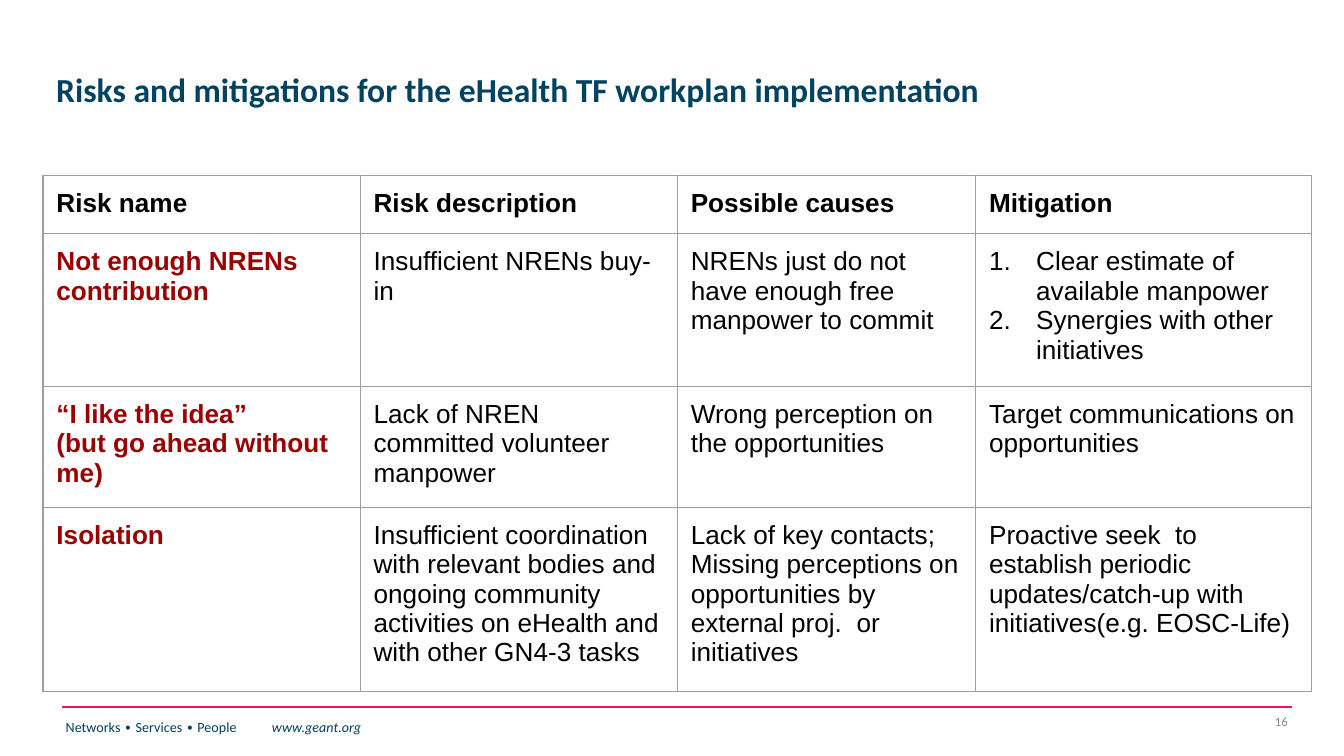
from dataclasses import dataclass

import lxml.etree
import pptx
import pptx.dml.color
import pptx.enum.shapes
import pptx.enum.text
import pptx.oxml
import pptx.oxml.ns
import pptx.util

PX = 4572  # EMU per px, 200 px to the inch
NAVY, BLUE, PINK = "004361", "003F5E", "ED1556"
BLACK, RED, GREY, BORDER = "000000", "990000", "888888", "9E9E9E"
ALIGN = pptx.enum.text.PP_ALIGN
ANCHOR = pptx.enum.text.MSO_ANCHOR


@dataclass
class Span:
    text: str
    size: float
    color: str
    font: str = "Calibri"
    bold: bool = False
    italic: bool = False


@dataclass
class Label:
    left: int
    top: int
    width: int
    height: int
    spans: list[Span]
    align: ALIGN = ALIGN.LEFT
    anchor: ANCHOR = ANCHOR.MIDDLE
    line_spacing: float = 1.0
    tab: int = 0


@dataclass
class Risk:
    name: str
    description: str
    causes: str
    mitigation: str | list[str]  # a list is numbered
    height: int


def px(length: int) -> pptx.util.Emu:
    return pptx.util.Emu(length * PX)


def rgb(color: str) -> pptx.dml.color.RGBColor:
    return pptx.dml.color.RGBColor.from_string(color)


def add_child(parent, tag: str, **attributes: str):
    child = lxml.etree.SubElement(parent, pptx.oxml.ns.qn(tag))
    for key, value in attributes.items():
        child.set(key, value)
    return child


def add_span(paragraph, span: Span) -> None:
    for index, line in enumerate(span.text.split("\n")):
        if index:
            paragraph.add_line_break()
        run = paragraph.add_run()
        run.text = line
        run.font.name = span.font
        run.font.size = pptx.util.Pt(span.size)
        run.font.bold = span.bold
        run.font.italic = span.italic
        run.font.color.rgb = rgb(span.color)


def add_label(slide, label: Label) -> None:
    box = slide.shapes.add_textbox(px(label.left), px(label.top), px(label.width), px(label.height))
    frame = box.text_frame
    frame.word_wrap = True
    frame.vertical_anchor = label.anchor
    paragraph = frame.paragraphs[0]
    paragraph.alignment = label.align
    paragraph.line_spacing = label.line_spacing
    if label.tab:
        stops = add_child(paragraph._p.get_or_add_pPr(), "a:tabLst")
        add_child(stops, "a:tab", pos=str(px(label.tab)), algn="l")
    for span in label.spans:
        add_span(paragraph, span)


def number_paragraph(paragraph) -> None:
    properties = paragraph._p.get_or_add_pPr()
    properties.set("marL", str(px(70)))
    properties.set("indent", str(px(-70)))
    color = add_child(properties, "a:buClr")
    add_child(color, "a:srgbClr", val=BLACK)
    add_child(properties, "a:buFont", typeface="Arial")
    add_child(properties, "a:buAutoNum", type="arabicPeriod")


def fill_cell(cell, content: str | list[str], color: str, bold: bool) -> None:
    cell.margin_left = cell.margin_right = cell.margin_top = cell.margin_bottom = px(20)
    cell.vertical_anchor = ANCHOR.TOP
    # Borders come before the fill in the cell properties
    properties = cell._tc.get_or_add_tcPr()
    for side in ("a:lnL", "a:lnR", "a:lnT", "a:lnB"):
        border = add_child(properties, side, w=str(pptx.util.Pt(0.75)))
        add_child(add_child(border, "a:solidFill"), "a:srgbClr", val=BORDER)
    cell.fill.background()
    numbered = isinstance(content, list)
    for index, text in enumerate(content if numbered else [content]):
        frame = cell.text_frame
        paragraph = frame.add_paragraph() if index else frame.paragraphs[0]
        if numbered:
            number_paragraph(paragraph)
        add_span(paragraph, Span(text, 14, color, "Arial", bold))


def add_risk_table(slide, left: int, top: int, widths: list[int], rows: list[Risk]) -> None:
    height = sum(row.height for row in rows)
    table = slide.shapes.add_table(
        len(rows), len(widths), px(left), px(top), px(sum(widths)), px(height)).table
    table.first_row = table.horz_banding = False
    for column, width in zip(table.columns, widths):
        column.width = px(width)
    for r, risk in enumerate(rows):
        table.rows[r].height = px(risk.height)
        contents = (risk.name, risk.description, risk.causes, risk.mitigation)
        for c, content in enumerate(contents):
            color = RED if r and c == 0 else BLACK
            fill_cell(table.cell(r, c), content, color, bold=r == 0 or c == 0)


def add_rule(slide, left: int, right: int, y: int) -> None:
    rule = slide.shapes.add_connector(
        pptx.enum.shapes.MSO_CONNECTOR.STRAIGHT, px(left), px(y), px(right), px(y))
    rule.line.color.rgb = rgb(PINK)
    rule.line.width = pptx.util.Pt(1)
    add_child(rule._element.spPr, "a:effectLst")


TITLE = Label(64, 72, 1720, 130, [
    Span("Risks and mitigations for the eHealth TF workplan implementation", 18, NAVY, bold=True),
], line_spacing=0.9)
FOOTER = Label(78, 1060, 682, 70, [
    Span("Networks ∙ Services ∙ People\t", 7.5, BLUE),
    Span("www.geant.org", 7.5, NAVY, italic=True),
], anchor=ANCHOR.TOP, tab=307)
PAGE_NUMBER = Label(1814, 1051, 122, 46, [Span("16", 6.8, GREY)], align=ALIGN.RIGHT)

# The second row grows to hold its text
RISKS = [
    Risk("Risk name", "Risk description", "Possible causes", "Mitigation", 86),
    Risk("Not enough NRENs\ncontribution",
         "Insufficient NRENs buy-in",
         "NRENs just do not have enough free manpower to commit",
         ["Clear estimate of available manpower", "Synergies with other initiatives"], 134),
    Risk("“I like the idea” \n(but go ahead without me)",
         "Lack of NREN committed volunteer manpower",
         "Wrong perception on the opportunities",
         "Target communications on opportunities", 178),
    Risk("Isolation",
         "Insufficient coordination  with relevant bodies and ongoing community "
         "activities on eHealth and with other GN4-3 tasks",
         "Lack of key contacts;\nMissing perceptions on opportunities by external proj.  or initiatives",
         "Proactive seek  to establish periodic updates/catch-up with "
         "initiatives(e.g. EOSC-Life)", 274),
]


def main() -> None:
    deck = pptx.Presentation()
    deck.slide_width, deck.slide_height = px(2000), px(1125)
    slide = deck.slides.add_slide(deck.slide_layouts[6])

    # Footer and title
    add_rule(slide, 93, 1923, 1052)
    for label in (FOOTER, PAGE_NUMBER, TITLE):
        add_label(slide, label)

    # Risk table
    add_risk_table(slide, 64, 261, [472, 472, 444, 500], RISKS)

    deck.save("out.pptx")


if __name__ == "__main__":
    main()
